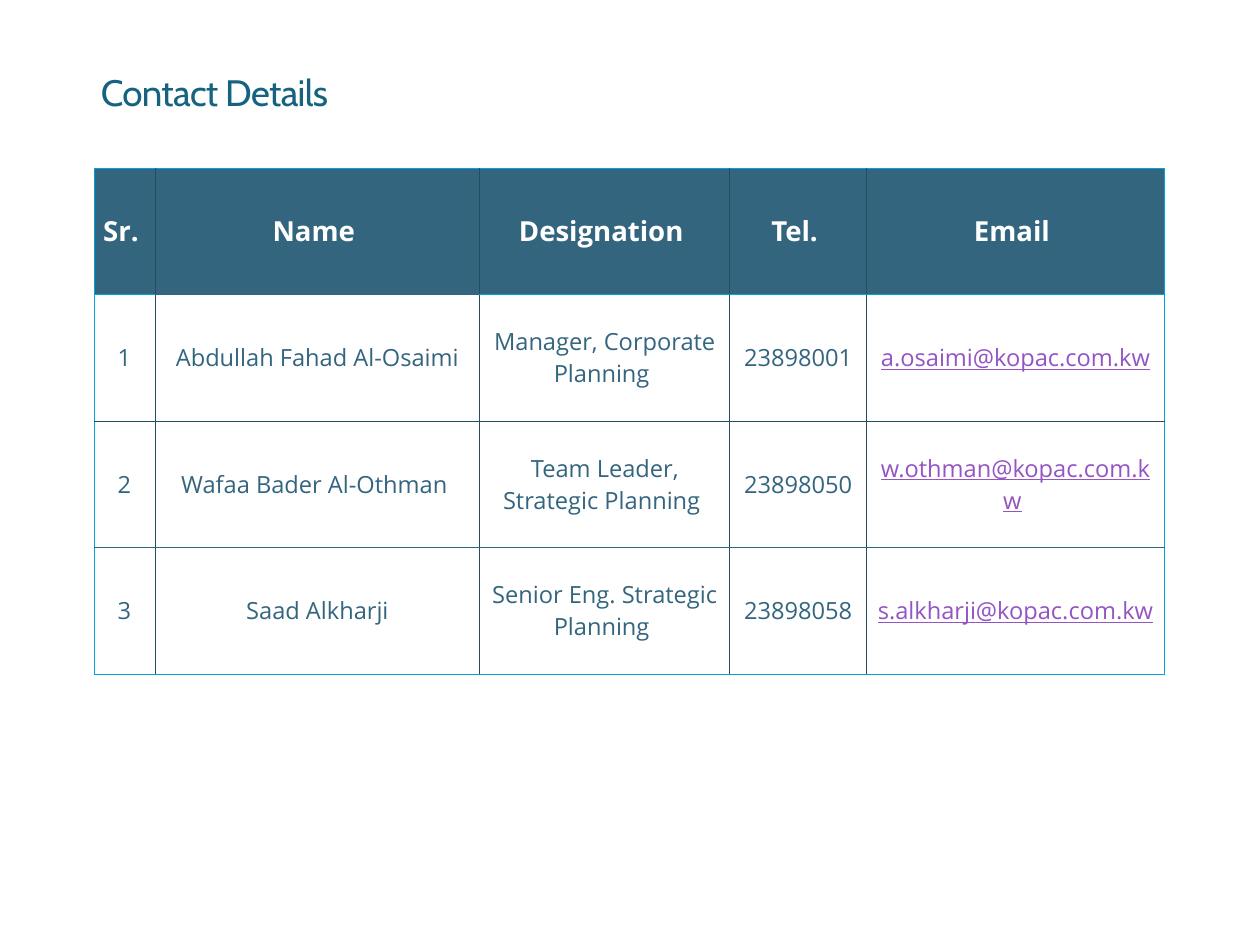
from lxml import etree
from pptx import Presentation, util as u
from pptx.dml.color import RGBColor
from pptx.enum import text
from pptx.oxml.ns import qn

SCALE = 12897  # EMU in one px
TEAL, DARK, CYAN = "33657F", "264C5F", "00A4DA"
WHITE, VIOLET, BLUE = "FFFFFF", "9454C3", "15637F"

HEAD = ["Sr. ", "Name ", "Designation ", "Tel. ", "Email "]
STAFF = [
    ["1", "Abdullah Fahad Al-Osaimi", "Manager, Corporate Planning ",
     "23898001", "a.osaimi@kopac.com.kw"],
    ["2", "Wafaa Bader Al-Othman ", "Team Leader, Strategic Planning ",
     "23898050", "w.othman@kopac.com.kw "],
    ["3", "Saad Alkharji", "Senior Eng. Strategic Planning ",
     "23898058", "s.alkharji@kopac.com.kw"],
]
WIDTHS = [61, 325, 250, 137, 298]
LEVELS = [CYAN, CYAN, DARK, TEAL, CYAN]  # horizontal rules, top to bottom
SIDES = [CYAN, DARK, DARK, DARK, DARK, CYAN]  # vertical rules, left to right


def px(n):
    return u.Emu(n * SCALE)


def rgb(code):
    return RGBColor.from_string(code)


class Page:
    def __init__(self, deck):
        self.body, self.title_font = "Open Sans", "Cabin"
        self.slide = deck.slides.add_slide(deck.slide_layouts[6])

    def style(self, run, name, size, color, bold=False):
        font = run.font
        font.name, font.size, font.bold = name, u.Pt(size), bold
        font.color.rgb = rgb(color)

    def title(self, words, x, y, w, h):
        frame = self.slide.shapes.add_textbox(px(x), px(y), px(w), px(h)).text_frame
        frame.word_wrap = True
        frame.text = words
        para = frame.paragraphs[0]
        para.line_spacing = 0.86
        run = para.runs[0]
        self.style(run, self.title_font, 37.3, BLUE)
        run.font._element.set("spc", "-70")

    def edge(self, cell, side, color):
        """Draw one border; side is L, R, T or B."""
        width = 0.75 if color == CYAN else 1
        props = cell._tc.get_or_add_tcPr()
        line = etree.SubElement(props, qn("a:ln" + side), w=str(u.Pt(width)))
        fill = etree.SubElement(line, qn("a:solidFill"))
        etree.SubElement(fill, qn("a:srgbClr"), val=color)

    def fill_cell(self, cell, words, head, mail):
        cell.vertical_anchor = text.MSO_ANCHOR.MIDDLE
        para = cell.text_frame.paragraphs[0]
        para.text = words.rstrip() if mail else words
        para.alignment = text.PP_ALIGN.CENTER
        if mail and words.endswith(" "):
            para.add_run().text = " "
        for run in para.runs:
            self.style(run, self.body, 28 if head else 24, WHITE if head else TEAL, head)
        if mail:
            font = para.runs[0].font
            font.underline = True
            font.color.rgb = rgb(VIOLET)
        if head:
            cell.fill.solid()
            cell.fill.fore_color.rgb = rgb(TEAL)
        else:
            cell.fill.background()

    def table(self, rows, widths, x, y, h):
        """Place a ruled table whose first row is the heading."""
        grid = self.slide.shapes.add_table(
            len(rows), len(widths), px(x), px(y), px(sum(widths)), px(h)).table
        grid.first_row = grid.horz_banding = False
        for col, width in zip(grid.columns, widths):
            col.width = px(width)
        for r, row in enumerate(rows):
            for c, words in enumerate(row):
                cell = grid.cell(r, c)
                levels = list(LEVELS)
                if HEAD[c] == "Name ":
                    levels[1] = TEAL
                self.edge(cell, "L", SIDES[c])
                self.edge(cell, "R", SIDES[c + 1])
                self.edge(cell, "T", levels[r])
                self.edge(cell, "B", levels[r + 1])
                self.fill_cell(cell, words, r == 0, "@" in words)


def main():
    deck = Presentation()
    deck.slide_width, deck.slide_height = u.Inches(17.78), u.Inches(13.33)
    page = Page(deck)
    page.table([HEAD] + STAFF, WIDTHS, 94, 168, 506)
    page.title("Contact Details", 94, 73, 1071, 65)
    deck.save("out.pptx")


if __name__ == "__main__":
    main()
